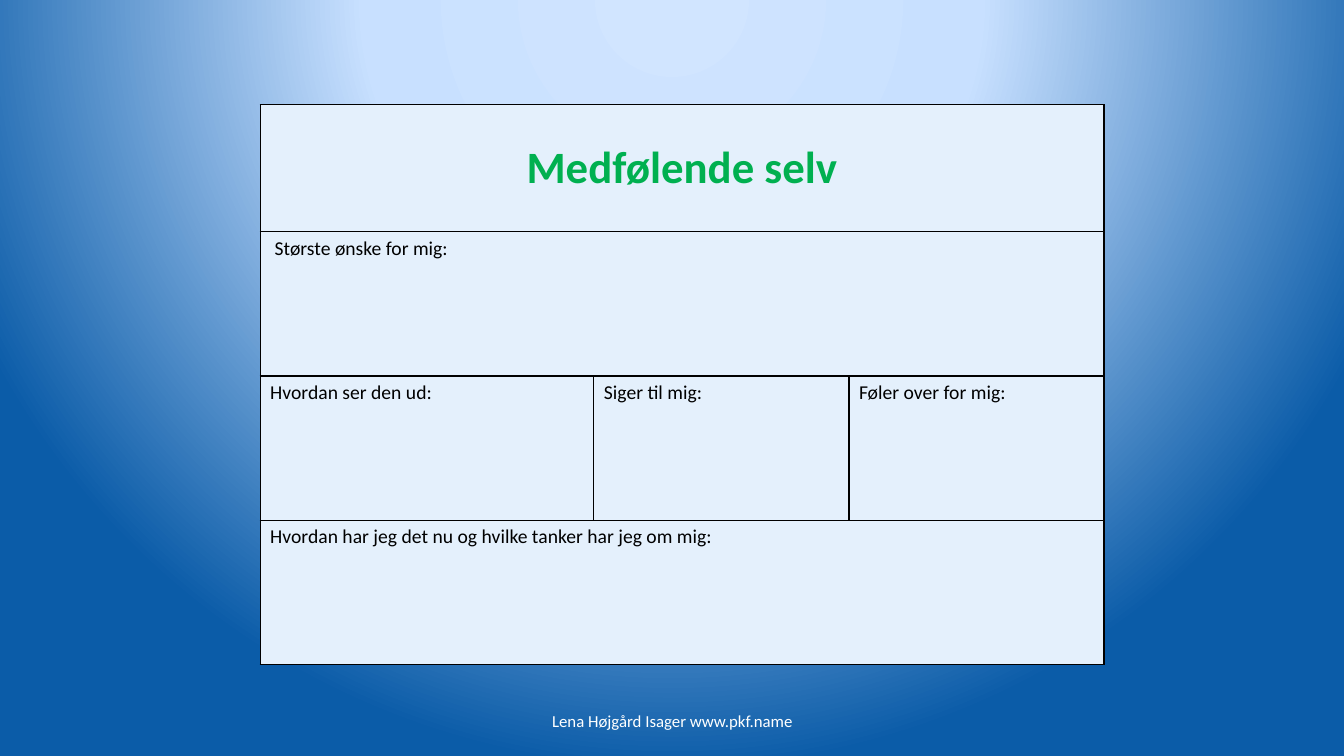
from pptx import Presentation
from pptx import util as u
from pptx.dml.color import RGBColor
from pptx.enum import text
from pptx.oxml import parse_xml
from pptx.oxml.ns import nsdecls

ROWS = [
    ["Medfølende selv"],
    [" Største ønske for mig:"],
    ["Hvordan ser den ud:", "Siger til mig:", "Føler over for mig:"],
    ["Hvordan har jeg det nu og hvilke tanker har jeg om mig:"],
]
FOOTER = "Lena Højgård Isager www.pkf.name"

SLIDE = (13.33, 7.5)
TABLE_AT = (2.58, 1.04)
COLS = [3.31, 2.53, 2.53]
HEIGHTS = [1.26, 1.43, 1.43, 1.43]
FOOTER_AT = (4.56, 6.95, 4.22, 0.4)

THEME = {
    "font": "Calibri",
    "cell": "E4F0FC",
    "border": "000000",
    "border_pt": 1,
    "glow": [(0, "D1E5FF"), (40, "C8E0FF"), (100, "0B5CA8")],
    "title": {"size": 32, "color": "00B050", "bold": True},
    "label": {"size": 14, "color": "000000", "bold": False},
    "footer": {"size": 12, "color": "FFFFFF", "bold": False},
}
CENTRED = {"alignment": text.PP_ALIGN.CENTER}
LEFT = {"alignment": text.PP_ALIGN.LEFT}


def write(tf, words, style, layout):
    p = tf.paragraphs[0]
    for name, value in layout.items():
        setattr(p, name, value)
    r = p.add_run()
    r.text = words
    look = THEME[style]
    for name, value in {"name": THEME["font"], "size": u.Pt(look["size"]), "bold": look["bold"]}.items():
        setattr(r.font, name, value)
    r.font.color.rgb = RGBColor.from_string(look["color"])


def paint_background(s):
    stops = "".join(
        f'<a:gs pos="{share * 1000}"><a:srgbClr val="{color}"/></a:gs>' for share, color in THEME["glow"]
    )
    s.element.cSld.insert(0, parse_xml(
        f'<p:bg {nsdecls("p", "a")}><p:bgPr><a:gradFill rotWithShape="1"><a:gsLst>{stops}</a:gsLst>'
        '<a:path path="circle"><a:fillToRect l="50000" t="-80000" r="50000" b="180000"/></a:path>'
        '</a:gradFill><a:effectLst/></p:bgPr></p:bg>'
    ))


def format_cell(cell):
    cell.fill.solid()
    cell.fill.fore_color.rgb = RGBColor.from_string(THEME["cell"])
    props = cell._tc.get_or_add_tcPr()
    for i, side in enumerate("LRTB"):
        props.insert(i, parse_xml(
            f'<a:ln{side} {nsdecls("a")} w="{u.Pt(THEME["border_pt"])}"><a:solidFill>'
            f'<a:srgbClr val="{THEME["border"]}"/></a:solidFill></a:ln{side}>'
        ))


def add_worksheet(s):
    box = [u.Inches(v) for v in (*TABLE_AT, sum(COLS), sum(HEIGHTS))]
    table = s.shapes.add_table(len(HEIGHTS), len(COLS), *box).table
    for column, width in zip(table.columns, COLS):
        column.width = u.Inches(width)
    for row, height in zip(table.rows, HEIGHTS):
        row.height = u.Inches(height)
    for cell in table.iter_cells():
        format_cell(cell)
    for i, labels in enumerate(ROWS):
        if len(labels) == 1:
            table.cell(i, 0).merge(table.cell(i, len(COLS) - 1))
        for j, words in enumerate(labels):
            cell = table.cell(i, j)
            cell.vertical_anchor = text.MSO_ANCHOR.TOP if i else text.MSO_ANCHOR.MIDDLE
            write(cell.text_frame, words, "label" if i else "title", LEFT if i else CENTRED)


def add_footer(s):
    tf = s.shapes.add_textbox(*[u.Inches(v) for v in FOOTER_AT]).text_frame
    for name, value in {"word_wrap": True, "vertical_anchor": text.MSO_ANCHOR.MIDDLE}.items():
        setattr(tf, name, value)
    write(tf, FOOTER, "footer", CENTRED)


def main():
    prs = Presentation()
    prs.slide_width, prs.slide_height = [u.Inches(v) for v in SLIDE]
    s = prs.slides.add_slide(prs.slide_layouts[6])
    paint_background(s)
    add_footer(s)
    add_worksheet(s)
    prs.save("out.pptx")


if __name__ == "__main__":
    main()
